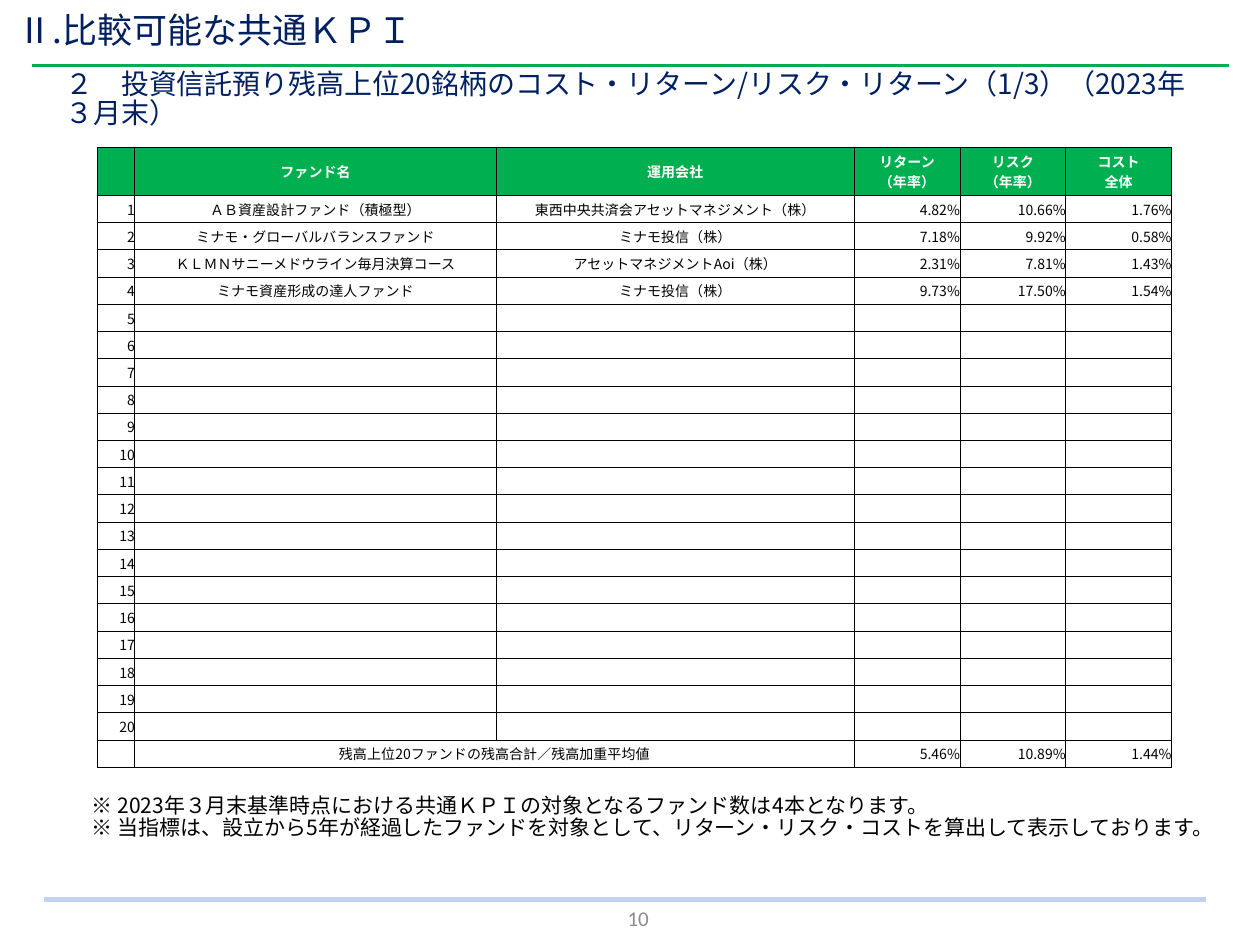
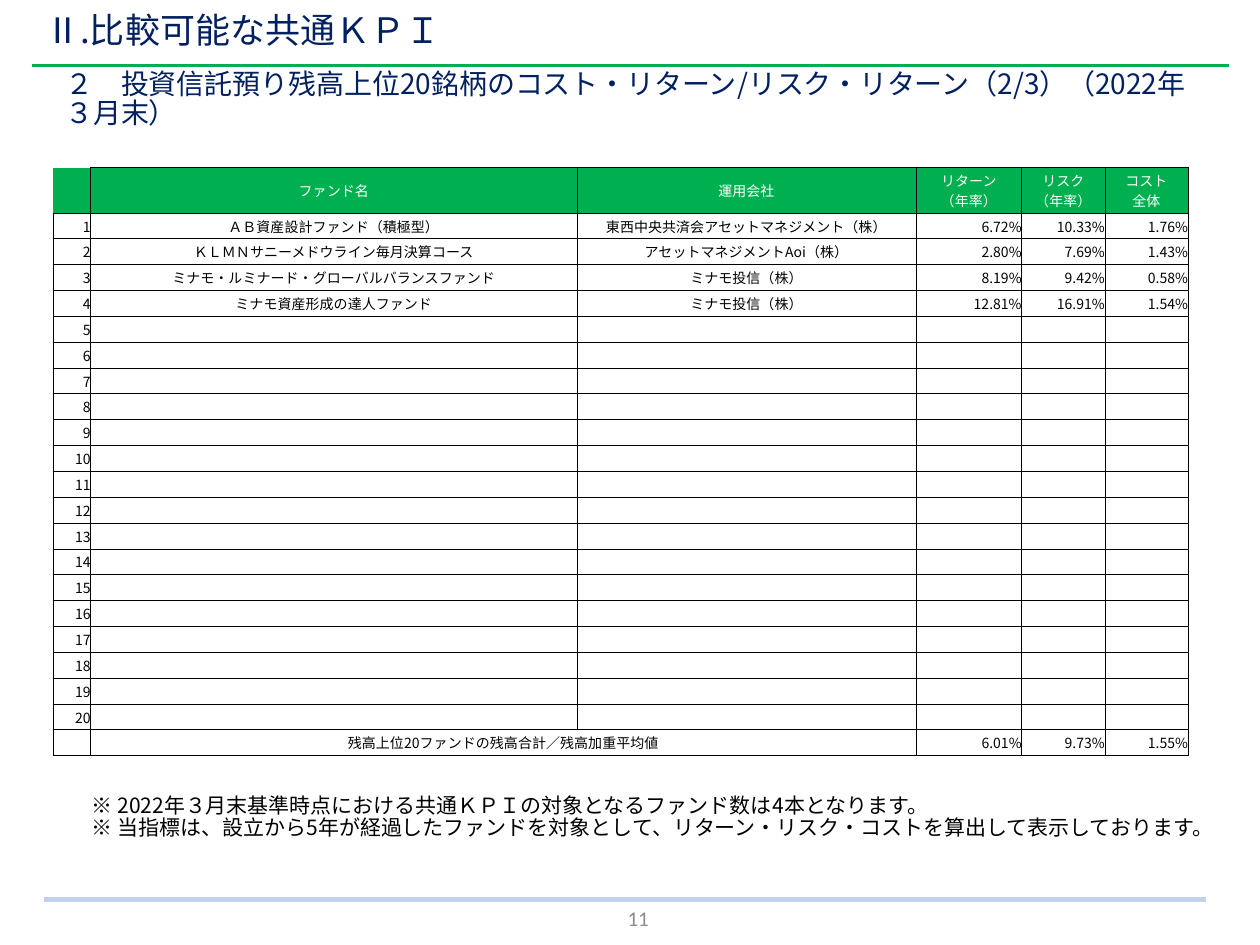
from copy import deepcopy

from pptx import Presentation
from pptx.dml.color import RGBColor
from pptx.enum.shapes import MSO_CONNECTOR
from pptx.enum.text import MSO_ANCHOR as Anchor, PP_ALIGN as Align
from pptx.oxml.ns import qn
from pptx.oxml.xmlchemy import OxmlElement as Element
from pptx.util import Inches, Pt

NAVY = RGBColor(0x00, 0x20, 0x60)
GREEN = RGBColor(0x00, 0xB0, 0x50)
PALE_BLUE = RGBColor(0xC2, 0xD1, 0xED)
GRAY = RGBColor(0x8C, 0x8C, 0x8C)
BLACK = RGBColor(0x00, 0x00, 0x00)
WHITE = RGBColor(0xFF, 0xFF, 0xFF)

CJK_FONT = "Noto Sans CJK JP"
TITLE_STYLE = {"name": CJK_FONT, "size": Pt(20), "color": NAVY}
SUBTITLE_STYLE = {"name": CJK_FONT, "size": Pt(16), "color": NAVY}
NOTE_STYLE = {"name": CJK_FONT, "size": Pt(12), "color": BLACK}
NUMBER_STYLE = {"name": "Calibri", "size": Pt(12), "color": GRAY}
CELL_STYLE = {"name": CJK_FONT, "size": Pt(8), "color": BLACK, "bold": False}

TITLE = "Ⅱ.比較可能な共通ＫＰＩ"
SUBTITLE = "２　投資信託預り残高上位20銘柄のコスト・リターン/リスク・リターン（{part}/3）（{year}年３月末）"
NOTES = [
    "※ {year}年３月末基準時点における共通ＫＰＩの対象となるファンド数は4本となります。",
    "※ 当指標は、設立から5年が経過したファンドを対象として、リターン・リスク・コストを算出して表示しております。",
]
HEADERS = ["", "ファンド名", "運用会社", "リターン\v（年率）", "リスク\v（年率）", "コスト\v全体"]
TOTAL_LABEL = "残高上位20ファンドの残高合計／残高加重平均値"
RANK_COUNT = 20

PLAN_FUND = ("ＡＢ資産設計ファンド（積極型）", "東西中央共済会アセットマネジメント（株）")
MONTHLY_FUND = ("ＫＬＭＮサニーメドウライン毎月決算コース", "アセットマネジメントAoi（株）")
GROWTH_FUND = ("ミナモ資産形成の達人ファンド", "ミナモ投信（株）")

PAGES = [
    {
        "number": 10, "part": 1, "year": 2023,
        "title_left": 0.04, "subtitle_width": 9.22,
        "table_at": (0.77, 1.17, 4.92), "header_height": 0.38,
        "columns": [0.3, 2.87, 2.84, 0.84, 0.84, 0.84],
        "bold_header": True, "corner_sides": "LRTB",
        "funds": [
            (*PLAN_FUND, "4.82%", "10.66%", "1.76%"),
            ("ミナモ・グローバルバランスファンド", "ミナモ投信（株）", "7.18%", "9.92%", "0.58%"),
            (*MONTHLY_FUND, "2.31%", "7.81%", "1.43%"),
            (*GROWTH_FUND, "9.73%", "17.50%", "1.54%"),
        ],
        "average": ("5.46%", "10.89%", "1.44%"),
    },
    {
        "number": 11, "part": 2, "year": 2022,
        "title_left": 0.26, "subtitle_width": 9.3,
        "table_at": (0.42, 1.33, 4.67), "header_height": 0.36,
        "columns": [0.3, 3.86, 2.69, 0.84, 0.66, 0.66],
        "bold_header": False, "corner_sides": "RB",
        "funds": [
            (*PLAN_FUND, "6.72%", "10.33%", "1.76%"),
            (*MONTHLY_FUND, "2.80%", "7.69%", "1.43%"),
            ("ミナモ・ルミナード・グローバルバランスファンド", "ミナモ投信（株）", "8.19%", "9.42%", "0.58%"),
            (*GROWTH_FUND, "12.81%", "16.91%", "1.54%"),
        ],
        "average": ("6.01%", "9.73%", "1.55%"),
    },
]


def style_span(span, style):
    for key, value in style.items():
        if key == "color":
            span.font.color.rgb = value
        else:
            setattr(span.font, key, value)
    east_asian = Element("a:ea")
    east_asian.set("typeface", style["name"])
    span.font._element.append(east_asian)


def add_text(page, place, lines, style, align=Align.LEFT, anchor=Anchor.MIDDLE, spacing=0.86):
    box = page.shapes.add_textbox(*map(Inches, place))
    frame = box.text_frame
    frame.word_wrap = True
    frame.vertical_anchor = anchor
    frame.text = "\n".join(lines)
    for para in frame.paragraphs:
        para.alignment = align
        para.line_spacing = spacing
        for span in para.runs:
            style_span(span, style)


def add_rule(page, left, right, top, color, width):
    rule = page.shapes.add_connector(
        MSO_CONNECTOR.STRAIGHT, Inches(left), Inches(top), Inches(right), Inches(top))
    rule.line.color.rgb = color
    rule.line.width = Pt(width)
    rule._element.spPr.append(Element("a:effectLst"))


def set_borders(cell, sides):
    properties = cell._tc.get_or_add_tcPr()
    for side in "LRTB":
        border = Element(f"a:ln{side}")
        if side in sides:
            border.set("w", str(Pt(0.5)))
            fill = Element("a:solidFill")
            color = Element("a:srgbClr")
            color.set("val", str(BLACK))
            fill.append(color)
        else:
            fill = Element("a:noFill")
        border.append(fill)
        properties.append(border)


def fill_cell(cell, text, align, style, fill=None, sides="LRTB"):
    set_borders(cell, sides)
    if fill is None:
        cell.fill.background()
    else:
        cell.fill.solid()
        cell.fill.fore_color.rgb = fill
    for side in ("left", "right", "top", "bottom"):
        setattr(cell, f"margin_{side}", 0)
    cell.vertical_anchor = Anchor.MIDDLE
    para = cell.text_frame.paragraphs[0]
    para.text = text
    para.alignment = align
    for span in para.runs:
        style_span(span, style)
    for line_break in para._p.findall(qn("a:br")):
        line_break.append(deepcopy(para.runs[0].font._element))
    if not text:
        end = Element("a:endParaRPr")
        end.set("sz", str(int(style["size"].pt * 100)))
        para._p.append(end)


def add_fund_table(page, content):
    blank = ("",) * 5
    funds = content["funds"] + [blank] * (RANK_COUNT - len(content["funds"]))
    rows = [HEADERS]
    rows += [(str(rank), *fund) for rank, fund in enumerate(funds, 1)]
    rows.append(("", TOTAL_LABEL, "", *content["average"]))

    left, top, height = content["table_at"]
    columns = content["columns"]
    table = page.shapes.add_table(
        len(rows), len(columns), *map(Inches, (left, top, sum(columns), height))).table
    table.first_row = table.horz_banding = False
    for column, width in zip(table.columns, columns):
        column.width = Inches(width)
    row_height = (height - content["header_height"]) / (len(rows) - 1)
    for index, row in enumerate(table.rows):
        row.height = Inches(row_height if index else content["header_height"])

    header_style = {**CELL_STYLE, "color": WHITE, "bold": content["bold_header"]}
    for row, values in enumerate(rows):
        for column, text in enumerate(values):
            cell = table.cell(row, column)
            if row == 0:
                sides = "LRTB" if column else content["corner_sides"]
                fill_cell(cell, text, Align.CENTER, header_style, GREEN, sides)
            else:
                align = Align.CENTER if column in (1, 2) else Align.RIGHT
                fill_cell(cell, text, align, CELL_STYLE)
    last = len(rows) - 1
    table.cell(last, 1).merge(table.cell(last, 2))


def add_page(deck, content):
    page = deck.slides.add_slide(deck.slide_layouts[6])
    add_text(page, (3.9, 7.21, 2.33, 0.16), [str(content["number"])], NUMBER_STYLE,
             Align.CENTER, spacing=1.0)
    add_rule(page, 0.35, 9.57, 7.14, PALE_BLUE, 2.5)
    add_rule(page, 0.25, 9.75, 0.52, GREEN, 2)
    add_text(page, (content["title_left"], 0.06, 6.79, 0.39), [TITLE], TITLE_STYLE)
    add_text(page, (0.42, 0.6, content["subtitle_width"], 0.39),
             [SUBTITLE.format(**content)], SUBTITLE_STYLE)
    add_fund_table(page, content)
    add_text(page, (0.63, 6.27, 9.37, 0.5), [note.format(**content) for note in NOTES],
             NOTE_STYLE, anchor=Anchor.TOP)


def main():
    deck = Presentation()
    deck.slide_width, deck.slide_height = Inches(10), Inches(7.5)
    for content in PAGES:
        add_page(deck, content)
    deck.save("out.pptx")


if __name__ == "__main__":
    main()
